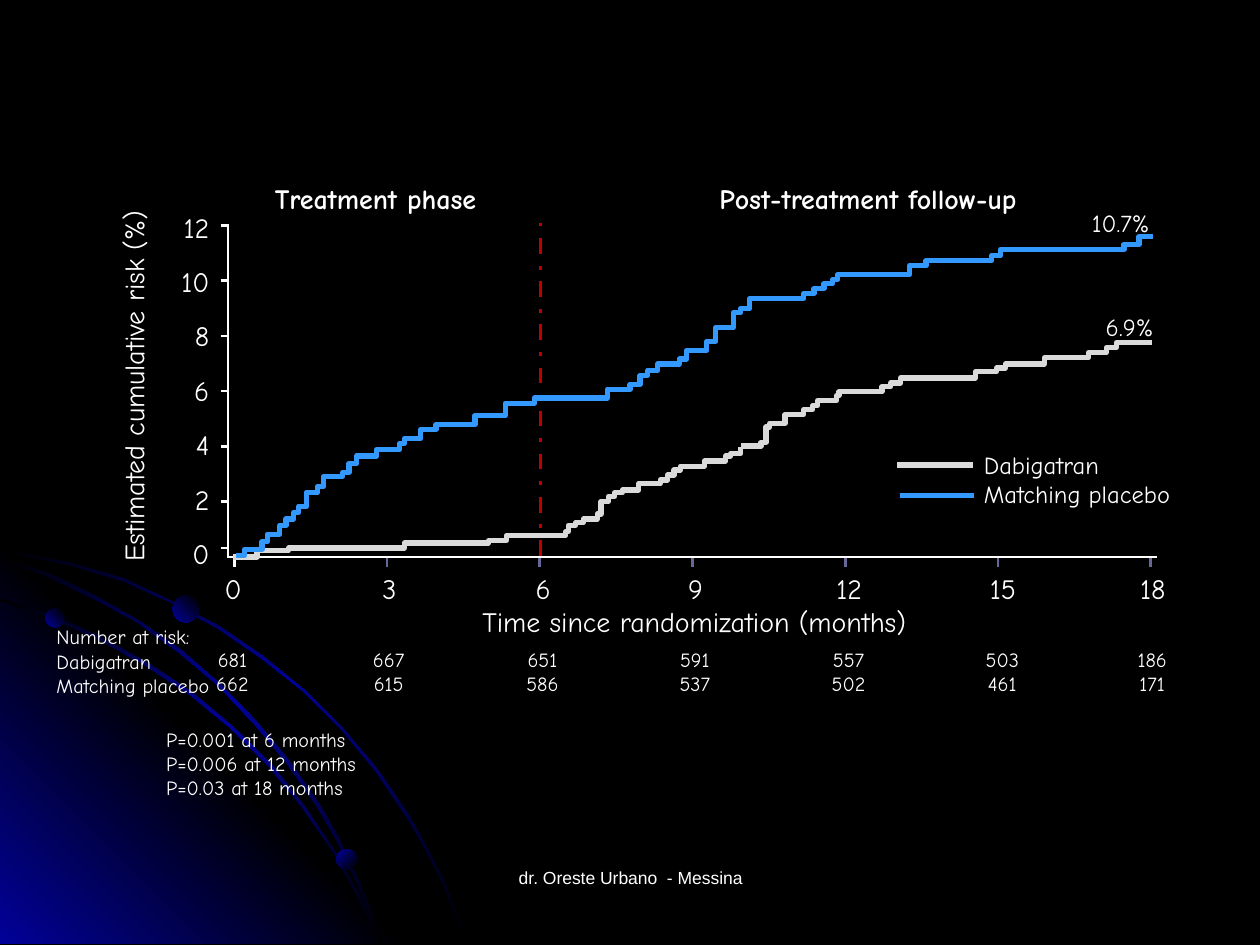
from copy import deepcopy

from pptx import Presentation
from pptx.dml.color import RGBColor
from pptx.enum.dml import MSO_LINE
from pptx.enum.shapes import MSO_CONNECTOR, MSO_SHAPE
from pptx.enum.text import PP_ALIGN
from pptx.oxml.ns import qn
from pptx.util import Emu, Pt

PX = 9144
BLACK = RGBColor(0x00, 0x00, 0x00)
WHITE = RGBColor(0xFF, 0xFF, 0xFF)
NAVY = RGBColor(0x01, 0x01, 0x99)
SLATE = RGBColor(0x66, 0x66, 0x99)
DABIGATRAN_GREY = RGBColor(0xDA, 0xDA, 0xDA)
PLACEBO_BLUE = RGBColor(0x33, 0x99, 0xFF)
PHASE_RED = RGBColor(0xC0, 0x00, 0x00)

MONTHS = [0, 3, 6, 9, 12, 15, 18]
MONTH_CENTRES = [185, 309, 431, 552, 674, 796, 915]
AT_RISK = [(681, 662), (667, 615), (651, 586), (591, 537), (557, 502), (503, 461), (186, 171)]

DABIGATRAN_TREATMENT = [
    (85, 342), (104, 337), (129, 335), (221, 331), (288, 329), (302, 325), (349, 322),
    (351, 317), (357, 315), (363, 312), (374, 308), (377, 298), (383, 294), (388, 291),
    (394, 289), (407, 284), (424, 281), (430, 277), (435, 273), (440, 270), (459, 266),
    (476, 262), (480, 260), (488, 255)]
DABIGATRAN_FOLLOW_UP = [
    (488, 254), (504, 251), (508, 239), (511, 236), (523, 229), (538, 225), (545, 222),
    (549, 218), (564, 214), (566, 211), (600, 207), (607, 204), (615, 200), (674, 195),
    (691, 192), (698, 189), (729, 184), (764, 180), (778, 176), (786, 172), (814, 172)]
PLACEBO_EARLY = [
    (87, 341), (94, 336), (108, 330), (112, 324), (122, 317), (127, 312), (133, 307),
    (137, 302), (143, 291), (152, 286), (157, 278), (172, 275), (177, 268), (183, 262),
    (199, 257), (217, 252), (221, 248), (234, 241), (246, 237), (277, 230), (301, 220),
    (324, 216), (382, 209), (400, 205), (408, 198), (414, 194), (422, 189), (439, 185),
    (445, 178), (461, 171), (468, 160), (482, 148), (488, 145), (495, 137), (506, 137)]
PLACEBO_LATE = [
    (506, 137), (538, 133), (546, 129), (554, 125), (561, 122), (565, 118), (622, 111),
    (635, 107), (687, 103), (694, 98), (792, 94), (804, 88), (815, 88)]

OUTER_TRAIL = [
    (57, 47), (28, 41), (0, 35), (0, 38), (28, 43), (56, 49), (97, 61), (135, 78),
    (173, 99), (208, 123), (241, 149), (271, 179), (298, 212), (323, 249), (337, 273),
    (350, 298), (360, 323), (370, 349), (372, 349), (362, 323), (352, 298), (339, 273),
    (325, 248), (300, 211), (272, 178), (242, 148), (209, 121), (174, 97), (136, 77), (98, 59)]
INNER_TRAIL = [
    (285, 314), (294, 332), (301, 349), (303, 349), (296, 330), (286, 312), (266, 276),
    (242, 240), (215, 206), (184, 176), (152, 149), (117, 126), (79, 105), (41, 88),
    (0, 75), (0, 77), (39, 90), (77, 107), (115, 128), (150, 151), (183, 178), (213, 208),
    (240, 241), (265, 277)]
MIDDLE_TRAIL = [
    (0, 42), (0, 44), (36, 57), (74, 75), (109, 94), (142, 118), (173, 144), (202, 175),
    (227, 205), (252, 241), (267, 267), (280, 294), (292, 322), (301, 349), (303, 349),
    (294, 320), (282, 293), (269, 265), (254, 239), (229, 203), (204, 173), (175, 143),
    (144, 116), (111, 93), (76, 73), (39, 55)]
GLOW = [(0, 27), (322, 349), (0, 349)]


def px(length):
    return Emu(round(length * PX))


def add_text(slide, left, top, width, height, lines, size,
             align=PP_ALIGN.LEFT, font="Comic Neue", bold=False):
    label = slide.shapes.add_textbox(px(left), px(top), px(width), px(height))
    label.text_frame.word_wrap = True
    label.text_frame.text = "\n".join(lines)
    for paragraph in label.text_frame.paragraphs:
        paragraph.alignment = align
        for run in paragraph.runs:
            run.font.name = font
            run.font.size = Pt(size)
            run.font.bold = bold
            run.font.color.rgb = WHITE
    return label


def add_line(slide, x1, y1, x2, y2, color=WHITE, width=1.5):
    line = slide.shapes.add_connector(MSO_CONNECTOR.STRAIGHT, px(x1), px(y1), px(x2), px(y2))
    line.line.color.rgb = color
    line.line.width = Pt(width)
    properties = line._element.spPr
    properties.append(properties.makeelement(qn("a:effectLst"), {}))
    return line


def add_outline(slide, left, top, points, close):
    moved = [(left + x, top + y) for x, y in points]
    builder = slide.shapes.build_freeform(*moved[0], scale=PX)
    builder.add_line_segments(moved[1:], close=close)
    outline = builder.convert_to_shape()
    outline.shadow.inherit = False
    return outline


def fill_gradient(shape, colors, angle):
    shape.shadow.inherit = False
    shape.line.fill.background()
    shape.fill.gradient()
    shape.fill.gradient_angle = 360 - angle
    stop_list = next(shape._element.spPr.iter(qn("a:gsLst")))
    for _ in colors[2:]:
        stop_list.append(deepcopy(stop_list[0]))
    for index, (stop, color) in enumerate(zip(shape.fill.gradient_stops, colors)):
        stop.color.rgb = color
        stop.position = index / (len(colors) - 1)


def draw_backdrop(slide, left, top):
    for points, colors, angle in [
            (OUTER_TRAIL, (BLACK, NAVY, BLACK), 45),
            (GLOW, (NAVY, BLACK, NAVY), 315),
            (INNER_TRAIL, (BLACK, NAVY, BLACK), 45),
            (MIDDLE_TRAIL, (BLACK, NAVY, BLACK), 45)]:
        fill_gradient(add_outline(slide, left, top, points, True), colors, angle)
    for x, y, diameter, angle in [(36, 83, 15, 315), (267, 274, 16, 45), (137, 73, 21, 315)]:
        planet = slide.shapes.add_shape(
            MSO_SHAPE.OVAL, px(left + x), px(top + y), px(diameter), px(diameter))
        fill_gradient(planet, (NAVY, BLACK), angle)


def draw_axes(slide, left, top):
    add_line(slide, left + 818, top + 342, left + 81, top + 342)
    add_line(slide, left + 81, top + 78, left + 81, top + 343)
    for index, month in enumerate(MONTHS):
        x = left + 86 + 121.2 * index
        add_line(slide, x, top + 350, x, top + 343, SLATE if index else WHITE)
        add_text(slide, left + MONTH_CENTRES[index] - 126, top + 349, 52, 37,
                 [str(month)], 16, PP_ALIGN.CENTER)
    for index in range(7):
        y = top + (341.8 - 43.8 * index if index else 335)
        add_line(slide, left + 75, y, left + 81, y)
        add_text(slide, left + 23, top + 321 - 43.2 * index, 53, 37,
                 [str(2 * index)], 16, PP_ALIGN.RIGHT)
    risk_title = add_text(slide, left - 162, top + 188, 336, 37,
                          ["Estimated cumulative risk (%)"], 16, PP_ALIGN.CENTER)
    risk_title.rotation = 270
    add_text(slide, left + 255, top + 375, 392, 37,
             ["Time since randomization (months)"], 16, PP_ALIGN.CENTER)


def draw_curve(slide, left, top, steps, color):
    points = steps[:1]
    for x, y in steps[1:]:
        points = points + [(x, points[-1][1]), (x, y)]
    curve = add_outline(slide, left, top, points, False)
    curve.fill.background()
    curve.line.color.rgb = color
    curve.line.width = Pt(3)


def draw_legend(slide, left, top):
    add_line(slide, left, top + 17, left + 60, top + 17, DABIGATRAN_GREY, 3)
    add_line(slide, left + 2, top + 41, left + 61, top + 41, PLACEBO_BLUE, 3)
    add_text(slide, left + 59, top, 205, 57, ["Dabigatran", "Matching placebo"], 14)


def draw_risk_chart(slide, left, top):
    draw_axes(slide, left, top)
    divider = add_line(slide, left + 329, top + 341, left + 329, top + 74, PHASE_RED, 2.25)
    divider.line.dash_style = MSO_LINE.DASH_DOT
    for x, width, phase in [(9, 378, "Treatment phase"), (426, 326, "Post-treatment follow-up")]:
        add_text(slide, left + x, top + 39, width, 37, [phase], 16, PP_ALIGN.CENTER, bold=True)
    for steps, color in [
            (DABIGATRAN_TREATMENT, DABIGATRAN_GREY), (PLACEBO_EARLY, PLACEBO_BLUE),
            (PLACEBO_LATE, PLACEBO_BLUE), (DABIGATRAN_FOLLOW_UP, DABIGATRAN_GREY)]:
        draw_curve(slide, left, top, steps, color)
    for x, y, risk in [(752, 143, "6.9%"), (745, 60, "10.7%")]:
        add_text(slide, left + x, top + y, 89, 34, [risk], 14, PP_ALIGN.CENTER)
    draw_legend(slide, left + 612, top + 252)


def draw_numbers_at_risk(slide, left, top):
    add_text(slide, left, top, 147, 88,
             ["Number at risk:", "Dabigatran", "Matching placebo"], 11.5)
    for centre, counts in zip(MONTH_CENTRES, AT_RISK):
        add_text(slide, left + centre - 64, top + 18, 57, 49,
                 [str(count) for count in counts], 11.5, PP_ALIGN.CENTER)


def draw_p_values(slide, left, top):
    add_text(slide, left, top, 291, 71,
             ["P=0.001 at 6 months", "P=0.006 at 12 months", "P=0.03 at 18 months"], 11.5)


def main():
    presentation = Presentation()
    presentation.slide_width = px(1000)
    presentation.slide_height = px(750)
    slide = presentation.slides.add_slide(presentation.slide_layouts[6])
    slide.background.fill.solid()
    slide.background.fill.fore_color.rgb = BLACK
    draw_backdrop(slide, 0, 400)
    add_text(slide, 342, 683, 317, 50, ["dr. Oreste Urbano  - Messina"], 10,
             PP_ALIGN.CENTER, "Arial")
    draw_risk_chart(slide, 100, 100)
    draw_numbers_at_risk(slide, 35, 491)
    draw_p_values(slide, 122, 572)
    presentation.save("out.pptx")


if __name__ == "__main__":
    main()
